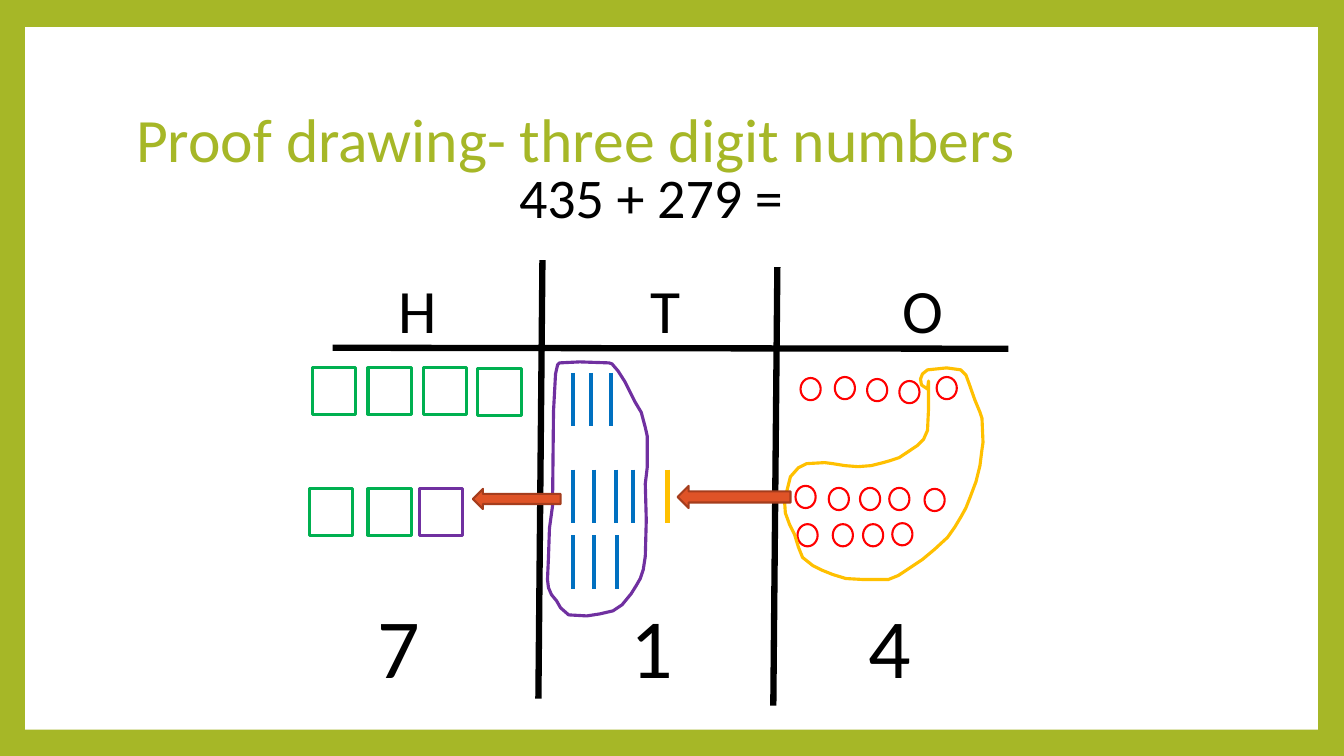
from lxml import etree
from pptx import Presentation
from pptx.dml.color import RGBColor
from pptx.enum.shapes import MSO_CONNECTOR, MSO_SHAPE
from pptx.enum.text import MSO_ANCHOR, MSO_AUTO_SIZE, PP_ALIGN
from pptx.oxml.ns import qn
from pptx.util import Pt

PX = 9144  # 100 px to the inch
RECT, OVAL, ARROW = MSO_SHAPE.RECTANGLE, MSO_SHAPE.OVAL, MSO_SHAPE.LEFT_ARROW
STRAIGHT = MSO_CONNECTOR.STRAIGHT
MIDDLE, LEFT, GROW = MSO_ANCHOR.MIDDLE, PP_ALIGN.LEFT, MSO_AUTO_SIZE.SHAPE_TO_FIT_TEXT

LIME = RGBColor(0xA6, 0xB7, 0x27)
WHITE = RGBColor(0xFF, 0xFF, 0xFF)
BLACK = RGBColor(0, 0, 0)
BLUE = RGBColor(0x00, 0x70, 0xC0)
GOLD = RGBColor(0xFF, 0xC0, 0x00)
RED = RGBColor(0xFF, 0, 0)
GREEN = RGBColor(0x00, 0xB0, 0x50)
PURPLE = RGBColor(0x70, 0x30, 0xA0)
ORANGE = RGBColor(0xDF, 0x53, 0x27)
RUST = RGBColor(0xA5, 0x3D, 0x1D)

HUNDREDS = [(310, 365), (365, 365), (420, 365), (474, 366), (307, 485), (365, 485)]
TENS = {370: (568, 586, 606), 466: (568, 589, 611, 628), 531: (568, 589, 612)}
ONES = [(794, 375), (828, 374), (860, 376), (892, 378), (929, 374),
        (789, 482), (822, 484), (853, 484), (882, 484), (917, 485),
        (791, 520), (826, 520), (856, 520), (885, 519)]
TEN_ONES = [
    (921, 378), (921, 405), (920, 427), (916, 436), (910, 442), (901, 448),
    (892, 454), (883, 457), (876, 459), (864, 462), (851, 463), (838, 462),
    (826, 460), (818, 459), (800, 460), (792, 464), (784, 473), (780, 489),
    (778, 495), (779, 509), (783, 520), (788, 530), (792, 543), (796, 553),
    (806, 561), (816, 566), (826, 570), (839, 574), (857, 575), (881, 575),
    (891, 571), (903, 563), (915, 555), (927, 545), (940, 533), (947, 523),
    (953, 513), (958, 504), (962, 494), (968, 478), (972, 462), (974, 446),
    (975, 439), (974, 415), (972, 409), (967, 397), (961, 380), (958, 372),
    (953, 367), (946, 366), (939, 365), (920, 367), (915, 371), (913, 376),
    (914, 382), (920, 386)]
TEN_TENS = [
    (555, 360), (575, 359), (604, 360), (607, 361), (613, 368), (620, 379),
    (625, 389), (630, 399), (636, 409), (640, 424), (642, 433), (642, 463),
    (640, 480), (641, 516), (640, 552), (638, 565), (635, 574), (631, 581),
    (626, 589), (617, 600), (608, 606), (595, 609), (582, 611), (564, 610),
    (556, 603), (552, 596), (547, 590), (544, 583), (543, 575), (544, 553),
    (545, 524), (548, 502), (549, 408), (551, 371), (553, 362)]


class Board:
    """Draws on one slide, with lengths in px."""

    def __init__(self, slide, font):
        self.slide, self.shapes, self.font = slide, slide.shapes, font

    def back(self, color):
        fill = self.slide.background.fill
        fill.solid()
        fill.fore_color.rgb = color

    def place(self, shape, *box):
        shape.left, shape.top, shape.width, shape.height = [n * PX for n in box]

    def style(self, frame, size, color):
        for run in frame.paragraphs[0].runs:
            run.font.name, run.font.size = self.font, Pt(size)
            run.font.color.rgb = color

    def title(self, text, box, size, color):
        shape = self.shapes.title
        self.place(shape, *box)
        frame = shape.text_frame
        frame.text = text
        frame.vertical_anchor = MIDDLE
        frame.paragraphs[0].alignment = LEFT
        frame.paragraphs[0].line_spacing = 0.9
        self.style(frame, size, color)

    def text(self, text, box, size, stops=()):
        """Adds a text box whose tabs fall on the given stops."""
        frame = self.shapes.add_textbox(*[n * PX for n in box]).text_frame
        frame.word_wrap = True
        frame.auto_size = GROW
        frame.text = text
        self.style(frame, size, BLACK)
        if stops:
            props = frame.paragraphs[0]._p.get_or_add_pPr()
            tabs = etree.SubElement(props, qn("a:tabLst"))
            for stop in stops:
                etree.SubElement(tabs, qn("a:tab"), pos=str(stop * PX), algn="l")

    def paint(self, shape, line, width, fill=None):
        shape.shadow.inherit = False
        if fill is None:
            shape.fill.background()
        else:
            shape.fill.solid()
            shape.fill.fore_color.rgb = fill
        if line is None:
            shape.line.fill.background()
        else:
            shape.line.color.rgb = line
            shape.line.width = Pt(width)

    def shape(self, kind, box, line=None, width=1.5, fill=None):
        shape = self.shapes.add_shape(kind, *[n * PX for n in box])
        self.paint(shape, line, width, fill)

    def loop(self, points, color):
        """Adds a closed outline around a group of ten."""
        pen = self.shapes.build_freeform(*points[0], scale=PX)
        pen.add_line_segments(points[1:], close=True)
        self.paint(pen.convert_to_shape(), color, 2.25)

    def line(self, ends, color, width):
        line = self.shapes.add_connector(STRAIGHT, *[n * PX for n in ends])
        line.line.color.rgb = color
        line.line.width = Pt(width)
        etree.SubElement(line._element.spPr, qn("a:effectLst"))

    def tally(self, x, y, color):
        self.line((x, y, x, y + 53), color, 3)

    def square(self, x, y, color):
        self.shape(RECT, (x, y, 43, 46), color, 2.25)


def main():
    deck = Presentation()
    deck.slide_width, deck.slide_height = 1333 * PX, 750 * PX
    board = Board(deck.slides.add_slide(deck.slide_layouts[5]), "Calibri")

    board.back(LIME)
    board.shape(RECT, (25, 27, 1282, 697), fill=WHITE)
    # The title stays in front of the white panel
    title = board.shapes.title._element
    title.getparent().append(title)
    board.title("Proof drawing- three digit numbers", (125, 67, 1080, 148), 44, LIME)

    for ends in ((330, 345, 1000, 346), (534, 693, 538, 258), (767, 700, 771, 265)):
        board.line(ends, BLACK, 4.5)
    board.text("H\tT\tO", (385, 265, 575, 81), 44, (250, 500))
    board.text("435 + 279 =", (505, 156, 397, 77), 40)

    for y, row in TENS.items():
        for x in row:
            board.tally(x, y, BLUE)
    board.tally(662, 466, GOLD)
    for x, y in ONES:
        board.shape(OVAL, (x, y, 20, 22), RED)

    board.loop(TEN_ONES, GOLD)
    board.loop(TEN_TENS, PURPLE)
    for box in ((672, 482, 112, 22), (469, 485, 87, 20)):
        board.shape(ARROW, box, RUST, fill=ORANGE)

    for x, y in HUNDREDS:
        board.square(x, y, GREEN)
    board.square(416, 485, PURPLE)
    board.text("7\t1\t4", (365, 585, 689, 111), 60, (250, 487))

    deck.save("out.pptx")


if __name__ == "__main__":
    main()
